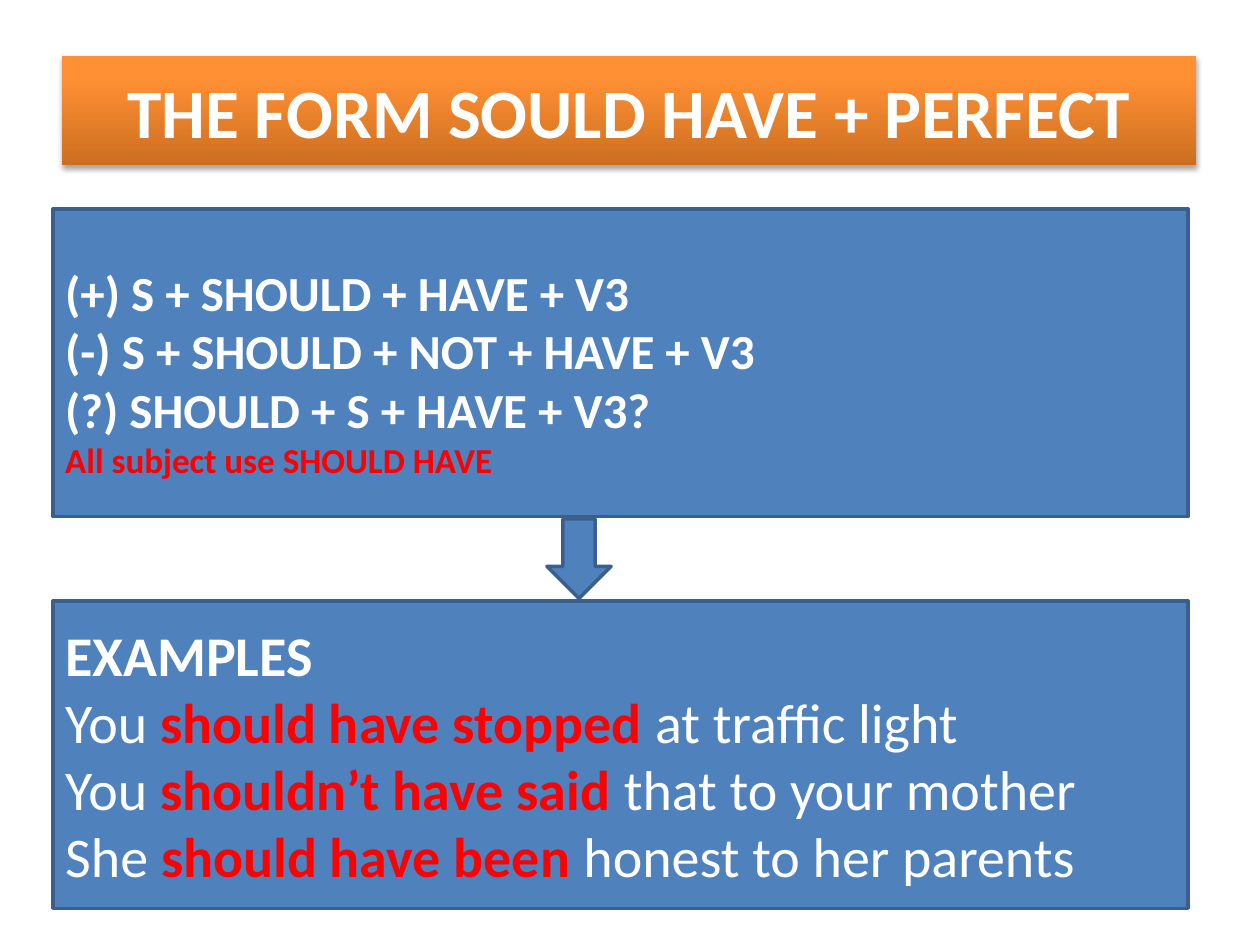
from copy import deepcopy
from lxml import etree
from pptx import Presentation
from pptx.dml.color import RGBColor
from pptx.enum.shapes import MSO_SHAPE
from pptx.enum.text import MSO_ANCHOR, MSO_AUTO_SIZE, PP_ALIGN
from pptx.util import Pt

RECT, DOWN = MSO_SHAPE.RECTANGLE, MSO_SHAPE.DOWN_ARROW
MID, FIXED = MSO_ANCHOR.MIDDLE, MSO_AUTO_SIZE.NONE
LEFT, CENTER = PP_ALIGN.LEFT, PP_ALIGN.CENTER
WHITE, RED, BLUE, EDGE = "FFFFFF", "FF0000", "4F81BD", "3A5F8C"

TITLE = "THE FORM SOULD HAVE + PERFECT"
FORMS = [
    [("(+) S + SHOULD + HAVE + V3", 28, WHITE, True)],
    [("(-) S + SHOULD + NOT + HAVE + V3", 28, WHITE, True)],
    [("(?) SHOULD + S + HAVE + V3?", 28, WHITE, True)],
    [("All subject use SHOULD HAVE", 20, RED, True)],
]
CASES = [
    ("You ", "should have stopped", " at traffic light"),
    ("You ", "shouldn’t have said", " that to your mother"),
    ("She ", "should have been", " honest to her parents"),
]
EXAMPLES = [[("EXAMPLES", 32, WHITE, True)]] + [
    [(who, 32, WHITE, False), (verb, 32, RED, True), (rest, 32, WHITE, False)]
    for who, verb, rest in CASES
]
STOPS = [(0, "CC6E20"), (0.8, "FF9034"), (1, "FF9136")]
SHADE = """<a:effectLst xmlns:a="http://schemas.openxmlformats.org/drawingml/2006/main">
<a:outerShdw blurRad="39370" dist="22860" dir="5400000" rotWithShape="0">
<a:srgbClr val="000000"><a:alpha val="35000"/></a:srgbClr></a:outerShdw></a:effectLst>"""

BOX_X, BOX_W, BOX_H = 30.2, 648.7, 175.7
BOXES = [(119.5, FORMS, 13.2), (343.4, EXAMPLES, 3.6)]
ARROW = (312.5, 296.6, 36.7, 45.4)


def color(code):
    return RGBColor.from_string(code)


def apply(item, values):
    for name, value in values.items():
        setattr(item, name, value)


def write(frame, lines, align, top=3.6):
    apply(frame, dict(word_wrap=True, auto_size=FIXED, vertical_anchor=MID,
                      margin_top=Pt(top)))
    for i, line in enumerate(lines):
        para = frame.add_paragraph() if i else frame.paragraphs[0]
        para.alignment = align
        for text, size, code, bold in line:
            run = para.add_run()
            run.text = text
            apply(run.font, dict(name="Calibri", size=Pt(size), bold=bold))
            run.font.color.rgb = color(code)


def add_blue(slide, kind, *place):
    shape = slide.shapes.add_shape(kind, *map(Pt, place))
    shape.shadow.inherit = False
    shape.fill.solid()
    shape.fill.fore_color.rgb = color(BLUE)
    shape.line.color.rgb = color(EDGE)
    shape.line.width = Pt(2)
    return shape


def add_title(slide):
    title = slide.shapes.title
    apply(title, dict(left=Pt(35.4), top=Pt(32), width=Pt(648), height=Pt(62.5)))
    title.fill.gradient()
    title.fill.gradient_angle = 90
    stops = title._element.xpath(".//a:gsLst")[0]
    stops.append(deepcopy(stops[-1]))
    for stop, (pos, code) in zip(title.fill.gradient_stops, STOPS):
        stop.position = pos
        stop.color.rgb = color(code)
    title._element.spPr.append(etree.fromstring(SHADE))
    write(title.text_frame, [[(TITLE, 39.6, WHITE, True)]], CENTER)


def main():
    deck = Presentation()
    apply(deck, dict(slide_width=Pt(720), slide_height=Pt(540)))
    slide = deck.slides.add_slide(deck.slide_layouts[5])
    add_title(slide)
    for top, lines, inset in BOXES:
        box = add_blue(slide, RECT, BOX_X, top, BOX_W, BOX_H)
        write(box.text_frame, lines, LEFT, inset)
    add_blue(slide, DOWN, *ARROW)
    deck.save("out.pptx")


if __name__ == "__main__":
    main()
